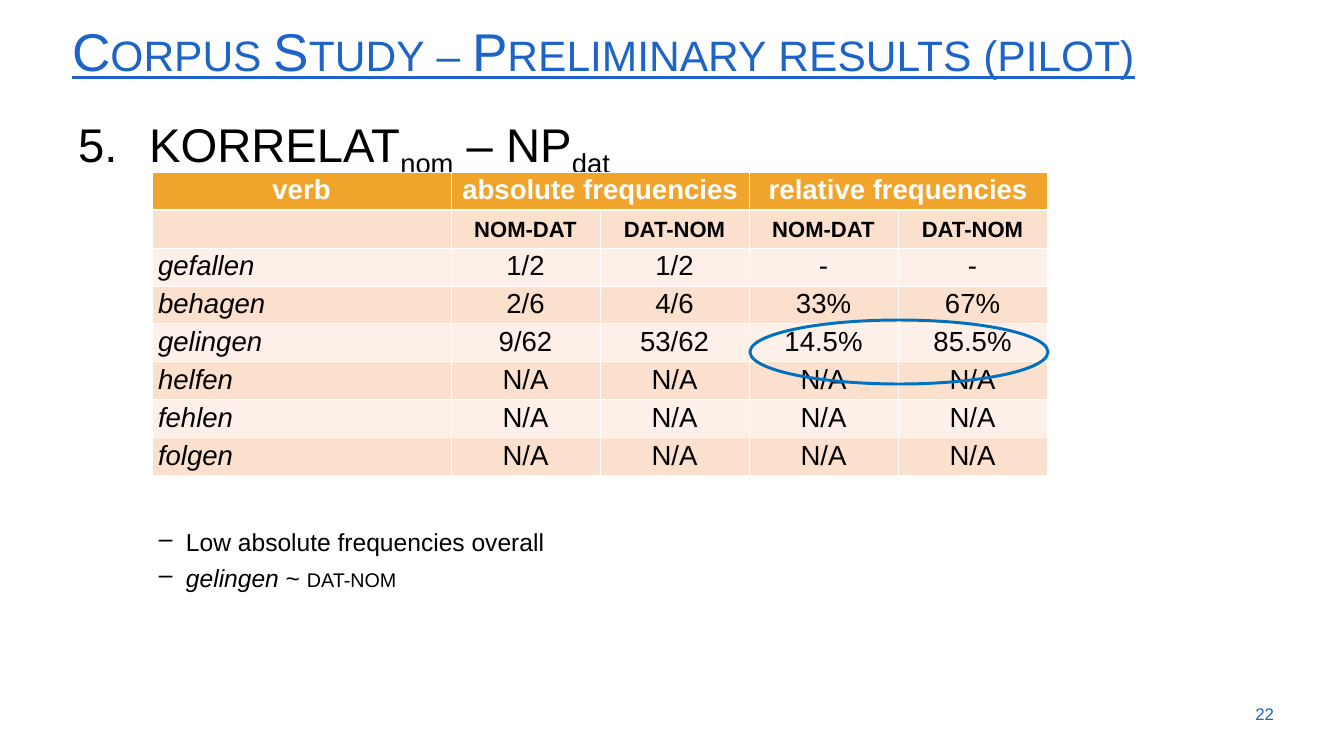
"""Build the slide on preliminary corpus results for KORRELAT and dative NP."""
from dataclasses import dataclass, field
from typing import Any, NamedTuple

from lxml.etree import SubElement
from pptx import Presentation
from pptx.dml.color import RGBColor
from pptx.enum.shapes import MSO_SHAPE
from pptx.enum.text import MSO_ANCHOR, MSO_AUTO_SIZE, PP_ALIGN
from pptx.oxml.ns import qn
from pptx.util import Emu, Pt

EMU_PER_PX = 12900


def px(length: int) -> Emu:
    return Emu(length * EMU_PER_PX)


@dataclass(frozen=True)
class Theme:
    font: str = "Arial"
    title_blue: str = "1E64C8"
    ring_blue: str = "0070C0"
    ink: str = "000000"
    white: str = "FFFFFF"
    header: str = "F1A42B"
    bands: tuple[str, str] = ("FCF0E8", "FAE0CD")
    title_size: float = 54
    heading_size: float = 48
    table_size: float = 28
    finding_size: float = 25
    number_size: float = 17.1
    thin: float = 1
    thick: float = 3


THEME = Theme()


class Box(NamedTuple):
    left: int
    top: int
    width: int
    height: int

    def emu(self) -> tuple[Emu, ...]:
        return tuple(px(length) for length in self)


class Style(NamedTuple):
    size: float
    colour: str


@dataclass(frozen=True)
class Piece:
    text: str
    format: dict[str, Any] = field(default_factory=dict)
    extra: dict[str, str] = field(default_factory=dict)


class Bullet(NamedTuple):
    tag: str
    attributes: dict[str, str]
    margin: int
    hang: int


SMALL_CAPS = {"cap": "small"}
SUBSCRIPT = {"baseline": "-25000"}
NUMBER_FIVE = Bullet("a:buAutoNum", {"type": "arabicPeriod", "startAt": "5"}, 77, 71)
DASH = Bullet("a:buChar", {"char": "–"}, 27, 27)

TITLE = Box(65, 20, 1218, 67)
HEADING = Box(65, 93, 1217, 519)
SLIDE_NUMBER = Box(1209, 694, 72, 40)
FINDINGS = Box(152, 518, 896, 75)
RING = Box(750, 320, 298, 64)
VERB_WIDTH, FREQUENCY_WIDTH, ROW_HEIGHT = 299, 149, 38

ORDERS = ("nom-dat", "dat-nom")
MISSING = ("N/A",) * 4
VERBS = {
    "gefallen": ("1/2", "1/2", "-", "-"),
    "behagen": ("2/6", "4/6", "33%", "67%"),
    "gelingen": ("9/62", "53/62", "14.5%", "85.5%"),
    "helfen": MISSING,
    "fehlen": MISSING,
    "folgen": MISSING,
}


def apply(target: Any, values: dict[str, Any]) -> None:
    for name, value in values.items():
        setattr(target, name, value)


def write(paragraph: Any, pieces: list[Piece], style: Style, layout: dict[str, Any],
          bullet: Bullet | None = None) -> None:
    if bullet:
        properties = paragraph._p.get_or_add_pPr()
        properties.set("marL", str(px(bullet.margin)))
        properties.set("indent", str(-px(bullet.hang)))
        SubElement(properties, qn(bullet.tag), bullet.attributes)
    apply(paragraph, layout)
    for piece in pieces:
        run = paragraph.add_run()
        run.text = piece.text
        apply(run.font, {"name": THEME.font, "size": Pt(style.size), **piece.format})
        run.font.color.rgb = RGBColor.from_string(style.colour)
        for name, value in piece.extra.items():
            run._r.get_or_add_rPr().set(name, value)


def place(shape: Any, box: Box, frame: dict[str, Any]) -> Any:
    apply(shape, dict(zip(("left", "top", "width", "height"), box.emu())))
    apply(shape.text_frame, {"word_wrap": True, "auto_size": MSO_AUTO_SIZE.NONE, **frame})
    return shape.text_frame


def border(cell: Any, top: float, bottom: float) -> None:
    widths = {"a:lnL": THEME.thin, "a:lnR": THEME.thin, "a:lnT": top, "a:lnB": bottom}
    for tag, width in widths.items():
        line = SubElement(cell._tc.get_or_add_tcPr(), qn(tag), {"w": str(Pt(width))})
        SubElement(SubElement(line, qn("a:solidFill")), qn("a:srgbClr"), {"val": THEME.white})


def table_rows() -> list[list[Piece]]:
    bold = {"bold": True}
    header = [Piece(text, bold) for text in
              ("verb", "absolute frequencies", "", "relative frequencies", "")]
    orders = [Piece("")] + [Piece(order, bold, SMALL_CAPS) for order in ORDERS * 2]
    verbs = [[Piece(verb, {"bold": False, "italic": True})]
             + [Piece(value, {"bold": False}) for value in values]
             for verb, values in VERBS.items()]
    return [header, orders, *verbs]


def draw_frequencies(slide: Any) -> None:
    rows = table_rows()
    widths = [VERB_WIDTH] + [FREQUENCY_WIDTH] * 4
    frame = Box(152, 172, sum(widths), ROW_HEIGHT * len(rows))
    table = slide.shapes.add_table(len(rows), len(widths), *frame.emu()).table
    for column, width in zip(table.columns, widths):
        column.width = px(width)
    for left in (1, 3):
        table.cell(0, left).merge(table.cell(0, left + 1))
    margins = {"margin_left": px(6), "margin_right": px(6),
               "margin_top": px(3), "margin_bottom": px(3)}
    for r, row in enumerate(rows):
        table.rows[r].height = px(ROW_HEIGHT)
        colour = THEME.white if r == 0 else THEME.ink
        for c, piece in enumerate(row):
            cell = table.cell(r, c)
            apply(cell, margins)
            border(cell, THEME.thick if r == 1 else THEME.thin,
                   THEME.thick if r == 0 else THEME.thin)
            cell.fill.solid()
            cell.fill.fore_color.rgb = RGBColor.from_string(
                THEME.bands[r % 2] if r else THEME.header)
            if piece.text:
                align = PP_ALIGN.LEFT if r > 1 and c == 0 else PP_ALIGN.CENTER
                write(cell.text_frame.paragraphs[0], [piece],
                      Style(THEME.table_size, colour), {"alignment": align})


def draw_ring(slide: Any) -> None:
    ring = slide.shapes.add_shape(MSO_SHAPE.OVAL, *RING.emu())
    ring.shadow.inherit = False
    ring.fill.background()
    ring.line.color.rgb = RGBColor.from_string(THEME.ring_blue)
    ring.line.width = Pt(THEME.thick)


def main() -> None:
    deck = Presentation()
    apply(deck, {"slide_width": px(1344), "slide_height": px(756)})
    slide = deck.slides.add_slide(deck.slide_layouts[1])

    title = place(slide.shapes.title, TITLE, {"vertical_anchor": MSO_ANCHOR.BOTTOM})
    write(title.paragraphs[0],
          [Piece("Corpus Study – Preliminary results (pilot)", {"underline": True}, SMALL_CAPS)],
          Style(THEME.title_size, THEME.title_blue),
          {"alignment": PP_ALIGN.LEFT, "line_spacing": 0.9})

    heading = place(slide.placeholders[1], HEADING, {"margin_top": px(9)})
    write(heading.paragraphs[0],
          [Piece("KORRELAT"), Piece("nom", extra=SUBSCRIPT),
           Piece(" – NP"), Piece("dat", extra=SUBSCRIPT)],
          Style(THEME.heading_size, THEME.ink),
          {"line_spacing": 1.2, "space_before": Pt(0)}, NUMBER_FIVE)

    number = place(slide.shapes.add_textbox(*SLIDE_NUMBER.emu()), SLIDE_NUMBER,
                   {"vertical_anchor": MSO_ANCHOR.MIDDLE})
    write(number.paragraphs[0], [Piece("22")],
          Style(THEME.number_size, THEME.title_blue), {"alignment": PP_ALIGN.RIGHT})

    draw_frequencies(slide)

    summary = place(slide.shapes.add_textbox(*FINDINGS.emu()), FINDINGS, {})
    findings = [[Piece("Low absolute frequencies overall")],
                [Piece("gelingen", {"italic": True}), Piece(" ~ "),
                 Piece("dat-nom", extra=SMALL_CAPS)]]
    for i, finding in enumerate(findings):
        paragraph = summary.add_paragraph() if i else summary.paragraphs[0]
        write(paragraph, finding, Style(THEME.finding_size, THEME.ink), {"line_spacing": 1.2}, DASH)

    draw_ring(slide)
    deck.save("out.pptx")


if __name__ == "__main__":
    main()
